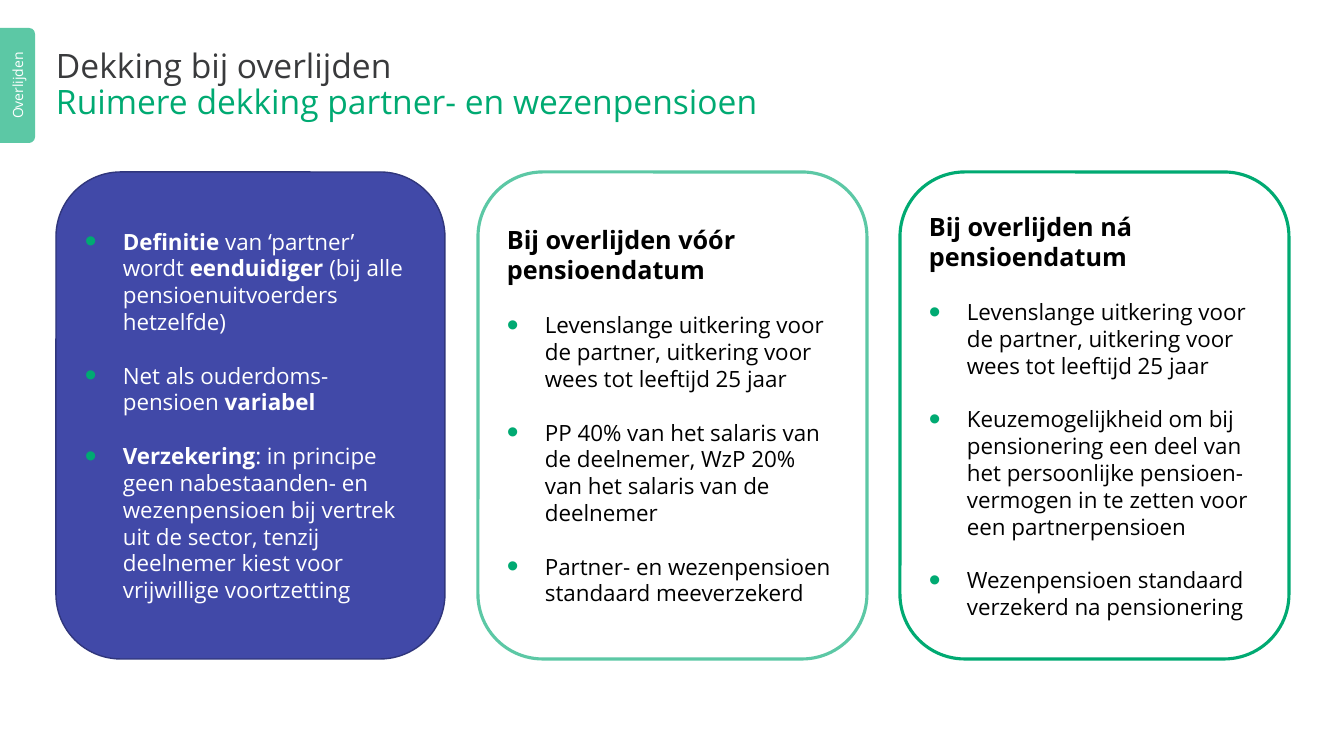
"""Build the slide on cover for partner and orphans at death."""
from lxml.etree import SubElement
from pptx import Presentation
from pptx.dml.color import RGBColor
from pptx.enum.shapes import MSO_SHAPE
from pptx.enum.text import MSO_ANCHOR, MSO_AUTO_SIZE, PP_ALIGN
from pptx.oxml.ns import qn
from pptx.util import Pt

PX = 914400 / 100.8
FONT = "Open Sans"
WHITE = RGBColor(0xFF, 0xFF, 0xFF)
BLACK = RGBColor(0, 0, 0)
GREY = RGBColor(0x39, 0x3A, 0x3C)
GREEN = RGBColor(0x00, 0xAA, 0x72)
MINT = RGBColor(0x5C, 0xC8, 0xA5)
BLUE = RGBColor(0x41, 0x49, 0xA8)
NAVY = RGBColor(0x30, 0x36, 0x7C)


def box(*sides):
    return [round(side * PX) for side in sides]


def write(para, text, size=16, color=BLACK, bold=False, bullet=False):
    run = para.add_run()
    run.text = text
    font = run.font
    font.name, font.size, font.bold = FONT, Pt(size), bold
    font.color.rgb = color
    props = para._p.get_or_add_pPr()
    if bullet and props.find(qn("a:buChar")) is None:
        indent = box(38)[0]
        props.set("marL", str(indent))
        props.set("indent", str(-indent))
        tint = SubElement(props, qn("a:buClr"))
        SubElement(tint, qn("a:srgbClr"), val=str(GREEN))
        SubElement(props, qn("a:buSzPct"), val="150000")
        SubElement(props, qn("a:buFont"), typeface="Arial")
        SubElement(props, qn("a:buChar"), char="•")


deck = Presentation()
deck.slide_width, deck.slide_height = box(1344, 756)
slide = deck.slides.add_slide(deck.slide_layouts[5])
shapes = slide.shapes

title = shapes.title
title.left, title.top, title.width, title.height = box(56, 28, 1233, 115)
frame = title.text_frame
frame.margin_left = frame.margin_right = frame.margin_top = frame.margin_bottom = 0
frame.vertical_anchor = MSO_ANCHOR.MIDDLE
frame.auto_size = MSO_AUTO_SIZE.NONE
para = frame.paragraphs[0]
para.alignment = PP_ALIGN.LEFT
para.line_spacing = 0.9
write(para, "Dekking bij overlijden", size=24, color=GREY)
para.add_line_break()
write(para, "Ruimere dekking partner- en wezenpensioen", size=24, color=GREEN)

place = box(-40, 68, 115, 35)
tab = shapes.add_shape(MSO_SHAPE.ROUND_2_SAME_RECTANGLE, *place)
tab.rotation = 90
tab.shadow.inherit = False
tab.fill.solid()
tab.fill.fore_color.rgb = MINT
tab.line.fill.background()
label = shapes.add_textbox(*place)
label.rotation = 270
frame = label.text_frame
frame.word_wrap = True
frame.vertical_anchor = MSO_ANCHOR.MIDDLE
para = frame.paragraphs[0]
para.alignment = PP_ALIGN.CENTER
write(para, "Overlijden", size=10, color=WHITE)

LIFE = "Levenslange uitkering voor de partner, uitkering voor wees tot leeftijd 25 jaar"
cards = [
    (BLUE, NAVY, 1, WHITE, None, [
        [("Definitie", True), (" van ‘partner’ wordt ", False), ("eenduidiger", True),
         (" (bij alle pensioenuitvoerders hetzelfde)", False)],
        [("Net als ouderdoms-pensioen ", False), ("variabel", True)],
        [("Verzekering", True),
         (": in principe geen nabestaanden- en wezenpensioen bij vertrek uit de sector, "
          "tenzij deelnemer kiest voor vrijwillige voortzetting", False)],
    ]),
    (WHITE, MINT, 2.25, BLACK, "Bij overlijden vóór pensioendatum", [
        [(LIFE, False)],
        [("PP 40% van het salaris van de deelnemer, WzP 20% van het salaris van de deelnemer",
          False)],
        [("Partner- en wezenpensioen standaard meeverzekerd", False)],
    ]),
    (WHITE, GREEN, 2.25, BLACK, "Bij overlijden ná pensioendatum", [
        [(LIFE, False)],
        [("Keuzemogelijkheid om bij pensionering een deel van het persoonlijke "
          "pensioen-vermogen in te zetten voor een partnerpensioen", False)],
        [("Wezenpensioen standaard verzekerd na pensionering", False)],
    ]),
]

for col, (fill, edge, width, ink, head, items) in enumerate(cards):
    card = shapes.add_shape(MSO_SHAPE.ROUNDED_RECTANGLE, *box(56 + col * 422, 172, 389, 487))
    card.shadow.inherit = False
    card.fill.solid()
    card.fill.fore_color.rgb = fill
    card.line.color.rgb = edge
    card.line.width = Pt(width)
    frame = card.text_frame
    frame.word_wrap = True
    frame.vertical_anchor = MSO_ANCHOR.MIDDLE
    para = frame.paragraphs[0]
    if head:
        write(para, head, size=18, color=ink, bold=True)
    for num, runs in enumerate(items):
        if head or num:
            para.space_after = Pt(19)
            para = frame.add_paragraph()
        for text, bold in runs:
            write(para, text, color=ink, bold=bold, bullet=True)
    for para in frame.paragraphs:
        para.alignment = PP_ALIGN.LEFT

deck.save("out.pptx")
